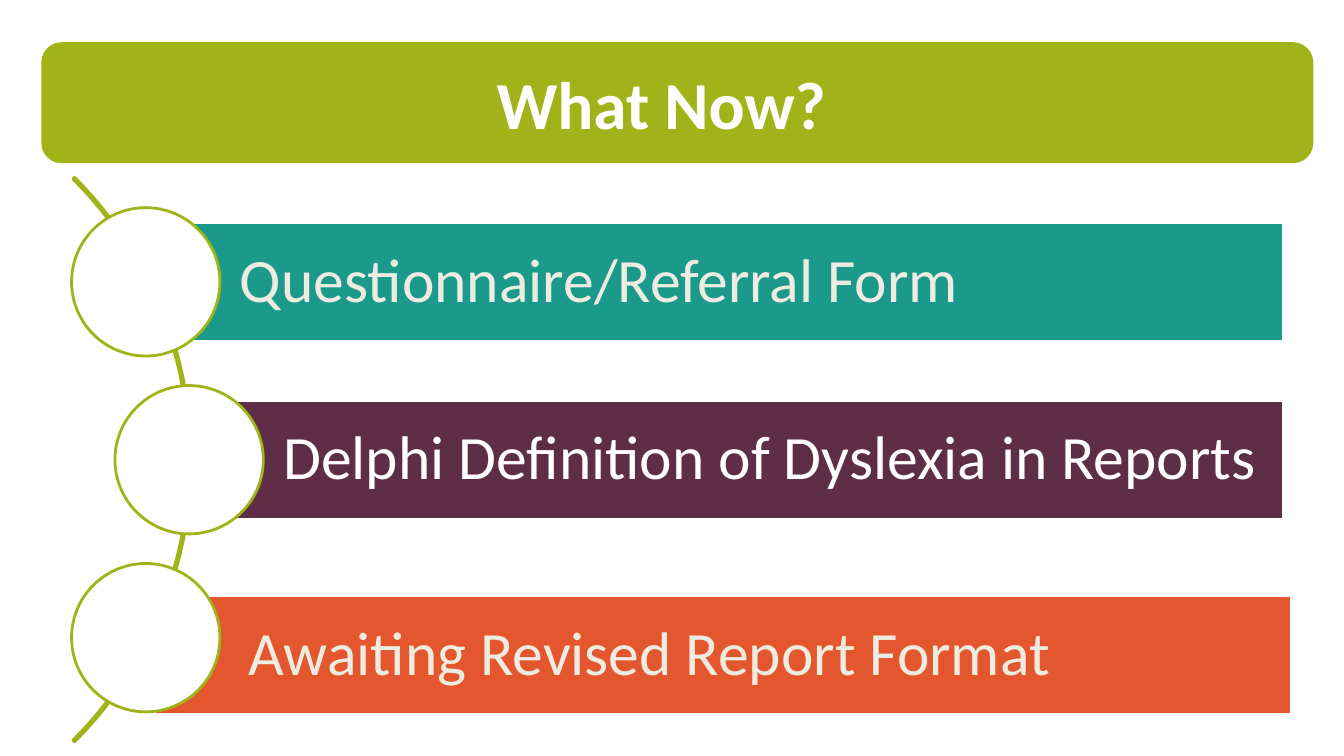
from lxml.etree import SubElement
from pptx import Presentation
from pptx.dml.color import RGBColor
from pptx.enum.shapes import MSO_SHAPE as Kind
from pptx.enum.text import MSO_ANCHOR as Anchor, MSO_AUTO_SIZE as Fit, PP_ALIGN as Align
from pptx.oxml.ns import qn
from pptx.util import Pt

GREEN, WHITE, CREAM = "A0B419", "FFFFFF", "EEECE1"


def color(code):
    return RGBColor.from_string(code)


def add(kind, box, fill=None, line=None):
    shape = slide.shapes.add_shape(kind, *[Pt(n) for n in box])
    shape.shadow.inherit = False
    if fill:
        shape.fill.solid()
        shape.fill.fore_color.rgb = color(fill)
    else:
        shape.fill.background()
    if line:
        shape.line.color.rgb = color(line)
        shape.line.width = Pt(2)
    else:
        shape.line.fill.background()
    return shape


deck = Presentation()
deck.slide_width, deck.slide_height = Pt(960), Pt(540)
slide = deck.slides.add_slide(deck.slide_layouts[5])

# Title on its green banner
banner = add(Kind.ROUNDED_RECTANGLE, (29.5, 30.2, 908.6, 86.4), GREEN)
title = slide.shapes.title
title.element.addprevious(banner.element)
title.left, title.top = banner.left, banner.top
title.width, title.height = banner.width, banner.height
frame = title.text_frame
frame.text = "What Now?"
frame.auto_size = Fit.NONE
frame.vertical_anchor = Anchor.MIDDLE
frame.margin_right = Pt(30)
para = frame.paragraphs[0]
para.alignment = Align.CENTER
para.font.name, para.font.size, para.font.bold = "Calibri", Pt(48), True
para.font.color.rgb = color(WHITE)

# Curve that links the circles
curve = add(Kind.BLOCK_ARC, (-433.4, 43.2, 570.2, 570.2), line=GREEN)
for i, value in enumerate((189, 27, 0.003)):
    curve.adjustments[i] = value

# Bars, each with a circle at its left end
rows = [
    ("Questionnaire/Referral Form", "1B998B", CREAM, 104.4, 159.1, 812.2, 51.1),
    ("Delphi Definition of Dyslexia in Reports", "5D2E46", WHITE, 135.4, 285.8, 781.2, 82.1),
    ("Awaiting Revised Report Format", "E4572E", CREAM, 110.2, 425.5, 812.2, 51.1),
]
for i, (text, fill, ink, left, top, width, dot) in enumerate(rows):
    bar = add(Kind.RECTANGLE, (left, top, width, 85), fill, WHITE)
    frame = bar.text_frame
    frame.text = text
    frame.word_wrap = True
    frame.vertical_anchor = Anchor.MIDDLE
    frame.margin_left = Pt(67)
    frame.margin_top = frame.margin_right = frame.margin_bottom = Pt(8.6)
    para = frame.paragraphs[0]
    para.alignment = Align.LEFT
    para.line_spacing = 0.9
    # Space after as a share of the line
    after = SubElement(para._p.get_or_add_pPr(), qn("a:spcAft"))
    SubElement(after, qn("a:spcPct"), val="35000")
    para.font.name, para.font.size = "Calibri", Pt(44)
    para.font.color.rgb = color(ink)
    add(Kind.OVAL, (dot, 148.3 + 127.1 * i, 106, 106), WHITE, GREEN)

deck.save("out.pptx")
